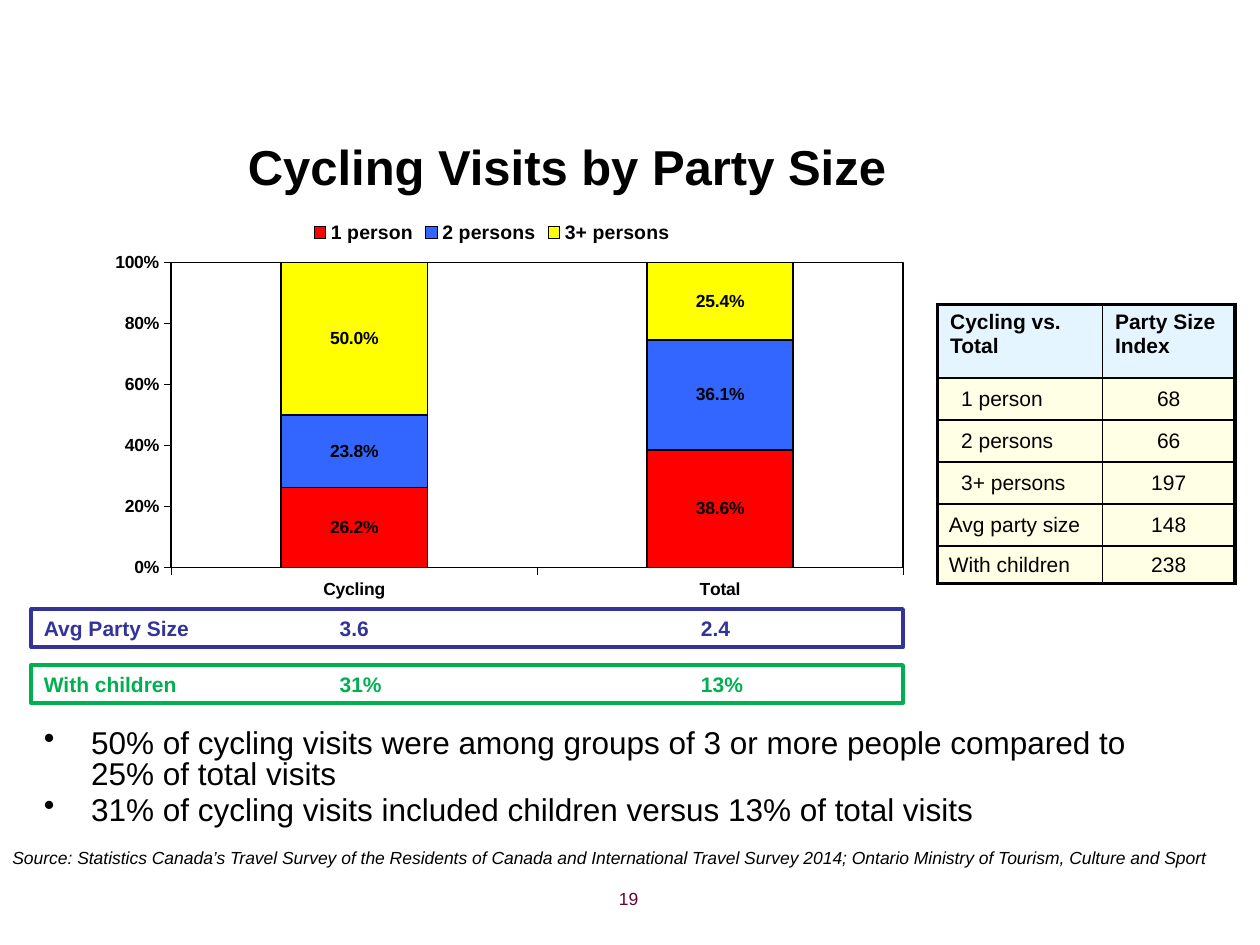
from dataclasses import dataclass

from lxml import etree
from pptx import Presentation
from pptx.chart.data import CategoryChartData
from pptx.dml.color import RGBColor
from pptx.enum import chart as charts, shapes, text
from pptx.oxml import parse_xml
from pptx.oxml.ns import nsdecls, qn
from pptx.util import Pt


@dataclass(frozen=True)
class Theme:
    font: str = "Arial"
    black: str = "000000"
    navy: str = "333399"
    green: str = "00B050"
    plum: str = "660033"
    header_fill: str = "CCECFF"
    body_fill: str = "FFFFCC"
    title_size: float = 28
    bullet_size: float = 18
    label_size: float = 12
    legend_size: float = 11.1
    small_size: float = 10
    thick: float = 2.25
    thin: float = 1
    hairline: float = 0.25


THEME = Theme()

TITLE = "Cycling Visits by Party Size"
CATEGORIES = ["Cycling", "Total"]
SERIES = [
    ("1 person", [0.262, 0.386], "FF0000"),
    ("2 persons", [0.238, 0.361], "3366FF"),
    ("3+ persons", [0.5, 0.254], "FFFF00"),
]
INDEX_HEADER = ["Cycling vs. Total", "Party Size Index"]
INDEX_ROWS = [  # label, index, left inset of the label
    ("1 person", "68", 13.5),
    ("2 persons", "66", 13.5),
    ("3+ persons", "197", 13.5),
    ("Avg party size", "148", 6.5),
    ("With children", "238", 6.5),
]
SUMMARY_ROWS = [
    (["Avg Party Size", "3.6", "2.4"], THEME.navy),
    (["With children", "31%", "13%"], THEME.green),
]
BULLETS = [
    "50% of cycling visits were among groups of 3 or more people compared to 25% of total visits",
    "31% of cycling visits included children versus 13% of total visits",
]
SOURCE = (
    "Source: Statistics Canada’s Travel Survey of the Residents of Canada and International "
    "Travel Survey 2014; Ontario Ministry of Tourism, Culture and Sport"
)
PAGE_NUMBER = "19"

# left, top, width, height in points
TITLE_BOX = (0, 70, 648, 49.5)
CHART_BOX = (48.25, 118, 473, 273.6)
TABLE_BOX = (535.75, 174, 170, 159.6)
BULLET_BOX = (18, 414, 646.5, 54)
SOURCE_BOX = (0, 480.25, 705.6, 19.5)
PAGE_BOX = (203.75, 504, 168, 25)
SUMMARY_BOX = (18, 348, 498, 21.75)
SUMMARY_STEP = 32
SUMMARY_TABS = (169, 375.5)
TABLE_COLUMNS = [94.25, 75.75]
TABLE_ROWS = [42, 24, 24, 24, 24, 21.6]


def points(values):
    return [Pt(value) for value in values]


def style_font(font, size, color=THEME.black, bold=False, italic=False):
    font.name, font.size = THEME.font, Pt(size)
    font.bold, font.italic = bold, italic
    font.color.rgb = RGBColor.from_string(color)


def style_line(line, color, width):
    line.color.rgb = RGBColor.from_string(color)
    line.width = Pt(width)


def write(paragraph, words, size, align=text.PP_ALIGN.LEFT, **style):
    paragraph.alignment = align
    run = paragraph.add_run()
    run.text = words
    style_font(run.font, size, **style)


def add_text_box(slide, box):
    frame = slide.shapes.add_textbox(*points(box)).text_frame
    frame.word_wrap = True
    return frame


def add_title(slide):
    title = slide.shapes.title
    title.left, title.top, title.width, title.height = points(TITLE_BOX)
    title.text_frame.vertical_anchor = text.MSO_ANCHOR.MIDDLE
    write(title.text_frame.paragraphs[0], TITLE, THEME.title_size, text.PP_ALIGN.CENTER, bold=True)


def chart_layout(target=None, **sizes):
    """Return a manual layout; sizes are fractions of the chart."""
    parts = [("layoutTarget", target)] if target else []
    parts += [(f"{axis}Mode", "edge") for axis in "xy"] + list(sizes.items())
    inner = "".join(f'<c:{name} val="{value}"/>' for name, value in parts)
    return parse_xml(f'<c:layout {nsdecls("c")}><c:manualLayout>{inner}</c:manualLayout></c:layout>')


def place_layout(parent, position, layout):
    for old in parent.findall(qn("c:layout")):
        parent.remove(old)
    parent.insert(position, layout)


def add_chart(slide):
    data = CategoryChartData(number_format="0.0%")
    data.categories = CATEGORIES
    for name, values, _ in SERIES:
        data.add_series(name, values)
    kind = charts.XL_CHART_TYPE.COLUMN_STACKED_100
    chart = slide.shapes.add_chart(kind, *points(CHART_BOX), data).chart
    chart.has_title = False
    style_font(chart.font, THEME.small_size, bold=True)

    chart.has_legend = True
    chart.legend.position = charts.XL_LEGEND_POSITION.TOP
    chart.legend.include_in_layout = False
    style_font(chart.legend.font, THEME.legend_size, bold=True)
    place_layout(chart.legend._element, 1, chart_layout(x=0.27, y=0.02))

    for axis in (chart.category_axis, chart.value_axis):
        axis.major_tick_mark = charts.XL_TICK_MARK.OUTSIDE
        axis.minor_tick_mark = charts.XL_TICK_MARK.NONE
        axis.has_major_gridlines = False
        style_font(axis.tick_labels.font, THEME.small_size, bold=True)
        style_line(axis.format.line, THEME.black, THEME.hairline)
    value_axis = chart.value_axis
    value_axis.minimum_scale, value_axis.maximum_scale, value_axis.major_unit = 0, 1, 0.2
    value_axis.tick_labels.number_format = "0%"
    value_axis.tick_labels.number_format_is_linked = False

    plot = chart.plots[0]
    plot.gap_width, plot.overlap, plot.vary_by_categories = 150, 100, False
    for series, (_, _, color) in zip(plot.series, SERIES):
        series.format.fill.solid()
        series.format.fill.fore_color.rgb = RGBColor.from_string(color)
        style_line(series.format.line, THEME.black, THEME.thin)
        labels = series.data_labels
        labels.show_value = True
        labels.number_format, labels.number_format_is_linked = "0.0%", False
        style_font(labels.font, THEME.small_size, bold=True)

    plot_area = chart._chartSpace.chart.plotArea
    place_layout(plot_area, 0, chart_layout("inner", x=0.105, y=0.117, w=0.884, h=0.637))
    plot_area.append(parse_xml(
        f'<c:spPr {nsdecls("c", "a")}><a:noFill/><a:ln w="{Pt(THEME.thin)}"><a:solidFill>'
        f'<a:srgbClr val="{THEME.black}"/></a:solidFill></a:ln></c:spPr>'))


def style_cell(cell, fill, thick_sides):
    properties = cell._tc.get_or_add_tcPr()
    for side in "LRTB":
        width = THEME.thick if side in thick_sides else THEME.thin
        line = etree.SubElement(properties, qn(f"a:ln{side}"), w=str(Pt(width)))
        solid = etree.SubElement(line, qn("a:solidFill"))
        etree.SubElement(solid, qn("a:srgbClr"), val=THEME.black)
    cell.fill.solid()
    cell.fill.fore_color.rgb = RGBColor.from_string(fill)
    color = properties.find(qn("a:solidFill")).find(qn("a:srgbClr"))
    etree.SubElement(color, qn("a:alpha"), val="50000")


def add_index_table(slide):
    rows = [INDEX_HEADER] + [row[:2] for row in INDEX_ROWS]
    table = slide.shapes.add_table(len(rows), 2, *points(TABLE_BOX)).table
    table.first_row = table.horz_banding = False
    for column, width in zip(table.columns, TABLE_COLUMNS):
        column.width = Pt(width)
    for row, height in zip(table.rows, TABLE_ROWS):
        row.height = Pt(height)
    for r, row in enumerate(rows):
        header = r == 0
        for c, words in enumerate(row):
            cell = table.cell(r, c)
            sides = "LR"[c] + ("T" if header else "") + ("B" if r == len(rows) - 1 else "")
            style_cell(cell, THEME.header_fill if header else THEME.body_fill, sides)
            if header:
                margins = (7.2, 3.6, 7.2, 3.6)
            else:
                margins = (0 if c else INDEX_ROWS[r - 1][2], 0, 0, 0)
                cell.vertical_anchor = text.MSO_ANCHOR.MIDDLE
            cell.margin_left, cell.margin_top, cell.margin_right, cell.margin_bottom = points(margins)
            align = text.PP_ALIGN.CENTER if c and not header else text.PP_ALIGN.LEFT
            write(cell.text_frame.paragraphs[0], words, THEME.label_size, align, bold=header)


def add_summary_rows(slide):
    left, top, width, height = SUMMARY_BOX
    for i, (words, color) in enumerate(SUMMARY_ROWS):
        box = points((left, top + i * SUMMARY_STEP, width, height))
        shape = slide.shapes.add_shape(shapes.MSO_SHAPE.RECTANGLE, *box)
        shape.shadow.inherit = False
        shape.fill.background()
        style_line(shape.line, color, THEME.thick)
        shape.text_frame.vertical_anchor = text.MSO_ANCHOR.MIDDLE
        paragraph = shape.text_frame.paragraphs[0]
        tabs = etree.SubElement(paragraph._p.get_or_add_pPr(), qn("a:tabLst"))
        for position in SUMMARY_TABS:
            etree.SubElement(tabs, qn("a:tab"), pos=str(Pt(position)), algn="l")
        write(paragraph, "\t".join(words), THEME.label_size, color=color, bold=True)


def add_bullets(slide):
    frame = add_text_box(slide, BULLET_BOX)
    for i, words in enumerate(BULLETS):
        paragraph = frame.add_paragraph() if i else frame.paragraphs[0]
        properties = paragraph._p.get_or_add_pPr()
        properties.set("marL", str(Pt(27)))
        properties.set("indent", str(Pt(-27)))
        etree.SubElement(properties, qn("a:buChar"), char="•")
        paragraph.line_spacing = 0.8
        if i:
            paragraph.space_before = Pt(3.6)
        write(paragraph, words, THEME.bullet_size)


def main():
    presentation = Presentation()
    presentation.slide_width, presentation.slide_height = Pt(720), Pt(540)
    slide = presentation.slides.add_slide(presentation.slide_layouts[5])
    add_title(slide)
    add_bullets(slide)
    add_chart(slide)
    add_index_table(slide)
    page = add_text_box(slide, PAGE_BOX).paragraphs[0]
    write(page, PAGE_NUMBER, THEME.small_size, text.PP_ALIGN.RIGHT, color=THEME.plum)
    source = add_text_box(slide, SOURCE_BOX).paragraphs[0]
    write(source, SOURCE, THEME.small_size, italic=True)
    add_summary_rows(slide)
    presentation.save("out.pptx")


if __name__ == "__main__":
    main()
